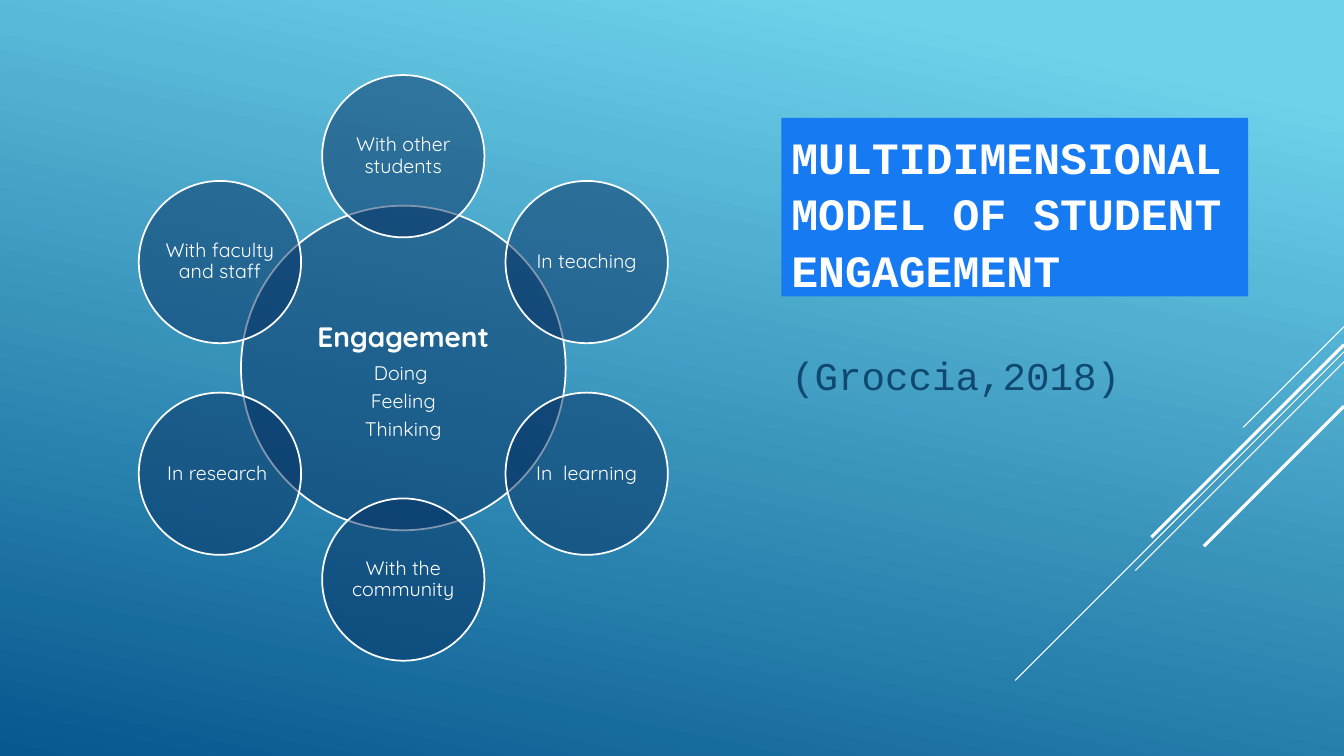
from math import cos, radians, sin

from lxml.etree import SubElement
from pptx import Presentation
from pptx.dml.color import RGBColor
from pptx.enum.shapes import MSO_CONNECTOR, MSO_SHAPE
from pptx.enum.text import MSO_ANCHOR, PP_ALIGN
from pptx.oxml.ns import qn
from pptx.util import Inches, Pt

COLORS = {
    "sky": "6ED2EB",
    "deep": "06588E",
    "white": "FFFFFF",
    "title": "167BF3",
    "citation": "0F496F",
    "circle": "052F61",
}
HEADING_FONT = "Courier New"
DIAGRAM_FONT = "Quicksand"

CENTER_X, CENTER_Y = 4, 3.65
HUB_RADIUS, PETAL_RADIUS, ORBIT = 1.61, 0.805, 2.1

# Clockwise from the top
DIMENSIONS = ["With other students", "In teaching", "In  learning",
              "With the community", "In research ", "With faculty and staff"]
HUB_LINES = [("Engagement", 20, True), ("Doing ", 14, False),
             ("Feeling", 14, False), ("Thinking", 14, False)]
# Start height on the right edge, horizontal run, line width
STRIPES = [(3.24, 1, 0.75), (3.49, 3.26, 0.75), (3.59, 2.07, 0.75),
           (3.42, 1.91, 2.25), (4.03, 1.39, 2.25)]


def color(name):
    return RGBColor.from_string(COLORS[name])


class SlideBuilder:
    def __init__(self, presentation):
        self.slide = presentation.slides.add_slide(presentation.slide_layouts[6])
        self.right_edge = presentation.slide_width

    def background(self):
        fill = self.slide.background.fill
        fill.gradient()
        fill.gradient_angle = 258
        for stop, position, name in zip(fill.gradient_stops, (0.1, 1), ("sky", "deep")):
            stop.position = position
            stop.color.rgb = color(name)

    def stripe(self, top, run, width):
        """Draw a 45-degree line down and left from the right edge."""
        line = self.slide.shapes.add_connector(
            MSO_CONNECTOR.STRAIGHT, self.right_edge, Inches(top),
            self.right_edge - Inches(run), Inches(top + run))
        line.line.color.rgb = color("white")
        line.line.width = Pt(width)
        SubElement(line._element.spPr, qn("a:effectLst"))

    def style_text(self, paragraph, size, font_name, color_name, bold=False):
        for run in paragraph.runs:
            run.font.size = Pt(size)
            run.font.name = font_name
            run.font.bold = bold
            run.font.color.rgb = color(color_name)

    def title(self, text):
        shape = self.slide.shapes.add_shape(
            MSO_SHAPE.RECTANGLE, Inches(7.75), Inches(1.17), Inches(4.63), Inches(1.77))
        shape.shadow.inherit = False
        shape.fill.solid()
        shape.fill.fore_color.rgb = color("title")
        shape.line.fill.background()
        frame = shape.text_frame
        frame.text = text
        frame.word_wrap = True
        frame.vertical_anchor = MSO_ANCHOR.BOTTOM
        frame.margin_bottom = 0
        paragraph = frame.paragraphs[0]
        paragraph.alignment = PP_ALIGN.LEFT
        paragraph.line_spacing = 1.05
        self.style_text(paragraph, 32, HEADING_FONT, "white", bold=True)

    def citation(self, text):
        box = self.slide.shapes.add_textbox(
            Inches(7.75), Inches(3.44), Inches(4), Inches(2.29))
        box.text_frame.word_wrap = True
        box.text_frame.text = text
        paragraph = box.text_frame.paragraphs[0]
        paragraph.space_before = Pt(5.6)
        self.style_text(paragraph, 28, HEADING_FONT, "citation")

    def circle(self, x, y, radius, lines, top_margin=0.02):
        """Draw a half-transparent circle around (x, y); lines are (text, size, bold)."""
        shape = self.slide.shapes.add_shape(
            MSO_SHAPE.OVAL, Inches(x - radius), Inches(y - radius),
            Inches(2 * radius), Inches(2 * radius))
        shape.shadow.inherit = False
        shape.fill.solid()
        shape.fill.fore_color.rgb = color("circle")
        fill_color = shape._element.spPr.find(qn("a:solidFill"))[0]
        SubElement(fill_color, qn("a:alpha"), val="50000")
        shape.line.color.rgb = color("white")
        shape.line.width = Pt(1.25)

        frame = shape.text_frame
        frame.word_wrap = True
        frame.vertical_anchor = MSO_ANCHOR.MIDDLE
        frame.margin_left = frame.margin_right = frame.margin_bottom = Inches(0.02)
        frame.margin_top = Inches(top_margin)
        frame.text = "\n".join(text for text, size, bold in lines)
        for paragraph, (text, size, bold) in zip(frame.paragraphs, lines):
            paragraph.alignment = PP_ALIGN.CENTER
            paragraph.line_spacing = 0.9
            paragraph.space_after = Pt(0.35 * size)
            self.style_text(paragraph, size, DIAGRAM_FONT, "white", bold)


def main():
    presentation = Presentation()
    presentation.slide_width = Inches(13.33)
    presentation.slide_height = Inches(7.5)
    builder = SlideBuilder(presentation)
    builder.background()
    for stripe in STRIPES:
        builder.stripe(*stripe)
    builder.title("MULTIDIMENSIONAL MODEL OF STUDENT ENGAGEMENT")
    builder.citation("(Groccia,2018)")
    builder.circle(CENTER_X, CENTER_Y, HUB_RADIUS, HUB_LINES, top_margin=0.3)
    for index, dimension in enumerate(DIMENSIONS):
        angle = radians(index * 360 / len(DIMENSIONS))
        builder.circle(CENTER_X + ORBIT * sin(angle), CENTER_Y - ORBIT * cos(angle),
                       PETAL_RADIUS, [(dimension, 14, False)])
    presentation.save("out.pptx")


if __name__ == "__main__":
    main()
